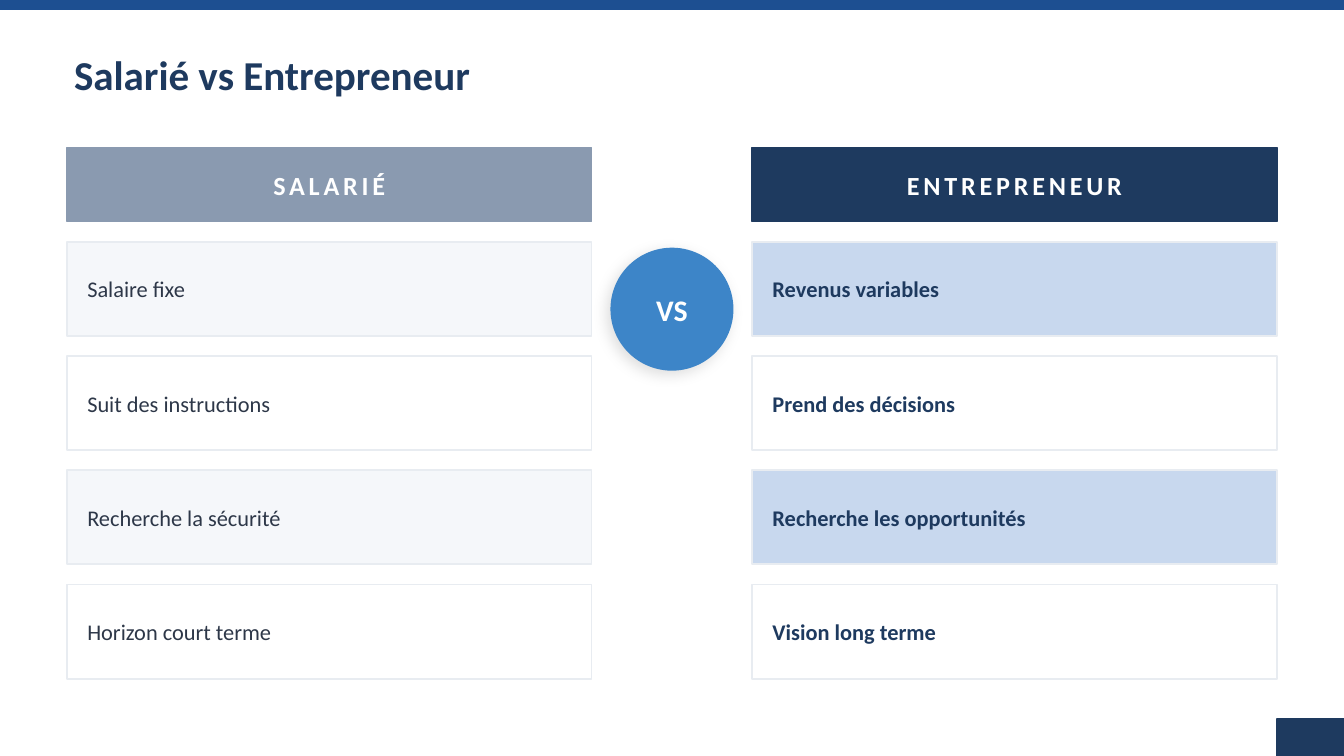
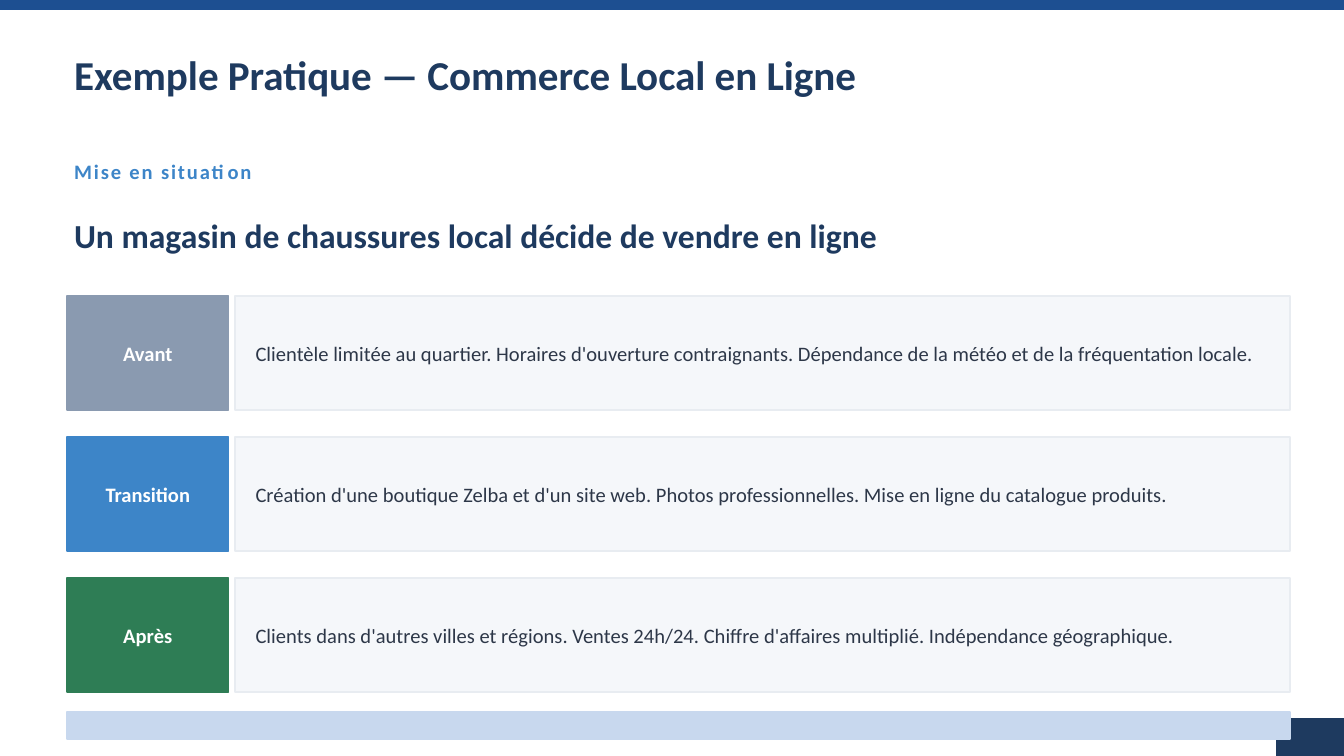
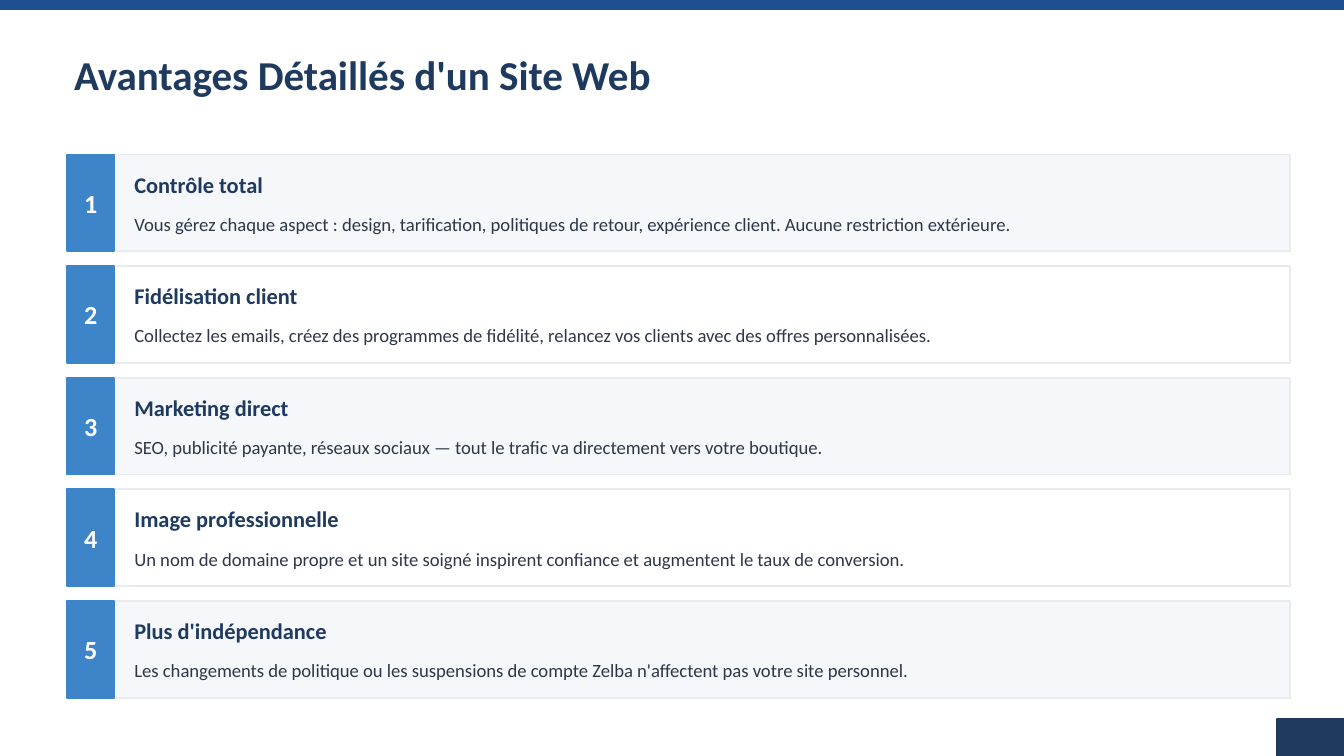
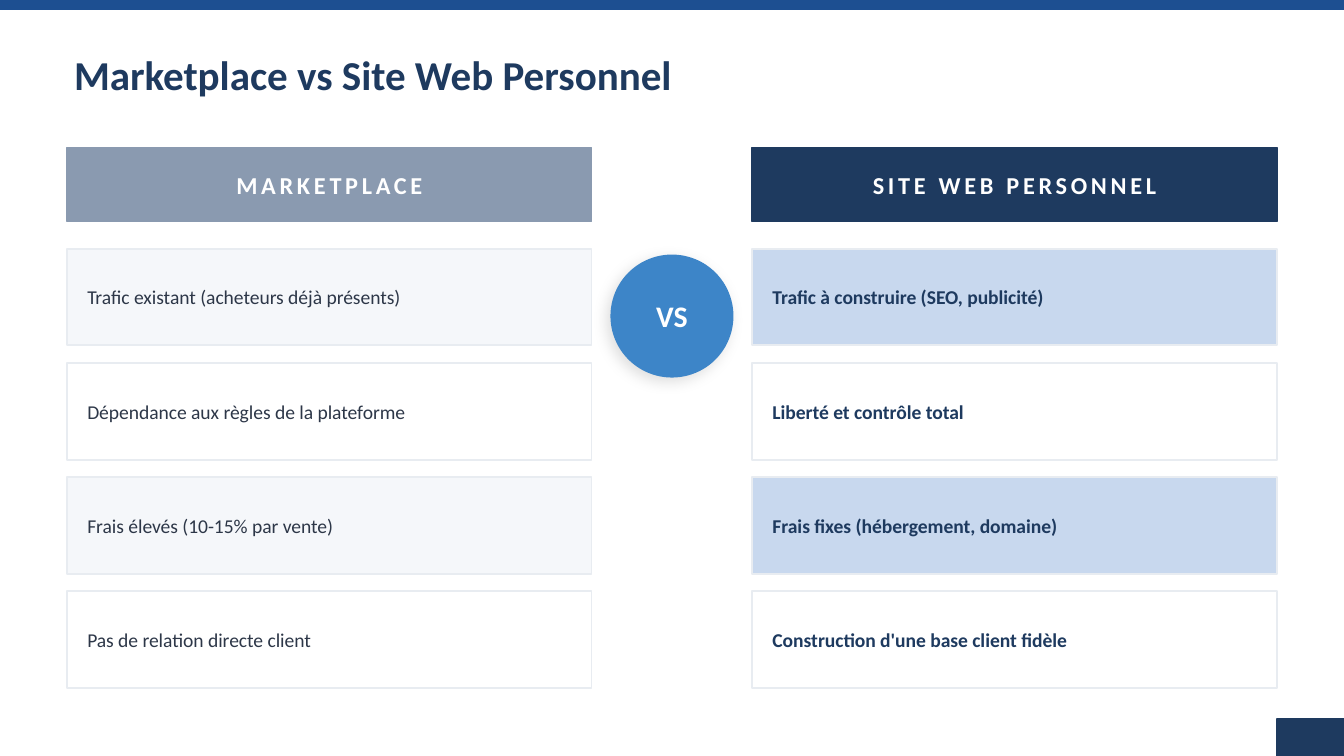
import pptx
import pptx.util
import pptx.dml.color
import pptx.enum.shapes
import pptx.enum.text
import pptx.oxml
import pptx.oxml.ns

Cm, Pt = pptx.util.Cm, pptx.util.Pt
SHAPE = pptx.enum.shapes.MSO_SHAPE
ALIGN = pptx.enum.text.PP_ALIGN

# ---- Content ----
EMPLOYEE_VS_FOUNDER = {
    "title": "Salarié vs Entrepreneur",
    "heads": ("SALARIÉ", "ENTREPRENEUR"),
    "pairs": [
        ("Salaire fixe", "Revenus variables"),
        ("Suit des instructions", "Prend des décisions"),
        ("Recherche la sécurité", "Recherche les opportunités"),
        ("Horizon court terme", "Vision long terme"),
    ],
    "head_size": 14, "row_size": 12, "top": 4.57, "row_height": 1.78,
}
MARKETPLACE_VS_SITE = {
    "title": "Marketplace vs Site Web Personnel",
    "heads": ("MARKETPLACE", "SITE WEB PERSONNEL"),
    "pairs": [
        ("Trafic existant (acheteurs déjà présents)", "Trafic à construire (SEO, publicité)"),
        ("Dépendance aux règles de la plateforme", "Liberté et contrôle total"),
        ("Frais élevés (10-15% par vente)", "Frais fixes (hébergement, domaine)"),
        ("Pas de relation directe client", "Construction d'une base client fidèle"),
    ],
    "head_size": 13, "row_size": 10.5, "top": 4.7, "row_height": 1.83,
}
EXAMPLE_TITLE = "Exemple Pratique — Commerce Local en Ligne"
EXAMPLE_LABEL = "Mise en situation"
EXAMPLE_SCENARIO = "Un magasin de chaussures local décide de vendre en ligne"
EXAMPLE_STAGES = [
    ("Avant", "slate", "Clientèle limitée au quartier. Horaires d'ouverture contraignants. "
     "Dépendance de la météo et de la fréquentation locale."),
    ("Transition", "blue", "Création d'une boutique Zelba et d'un site web. "
     "Photos professionnelles. Mise en ligne du catalogue produits."),
    ("Après", "green", "Clients dans d'autres villes et régions. Ventes 24h/24. "
     "Chiffre d'affaires multiplié. Indépendance géographique."),
]
BENEFITS_TITLE = "Avantages Détaillés d'un Site Web"
BENEFITS = [
    ("Contrôle total", "Vous gérez chaque aspect : design, tarification, politiques de retour, "
     "expérience client. Aucune restriction extérieure."),
    ("Fidélisation client", "Collectez les emails, créez des programmes de fidélité, "
     "relancez vos clients avec des offres personnalisées."),
    ("Marketing direct", "SEO, publicité payante, réseaux sociaux — tout le trafic va "
     "directement vers votre boutique."),
    ("Image professionnelle", "Un nom de domaine propre et un site soigné inspirent confiance "
     "et augmentent le taux de conversion."),
    ("Plus d'indépendance", "Les changements de politique ou les suspensions de compte Zelba "
     "n'affectent pas votre site personnel."),
]

# ---- Shared style (lengths in cm) ----
COLORS = {
    "band": "1D4F91", "navy": "1E3A5F", "blue": "3D85C8", "slate": "8A9AB0",
    "green": "2E7D55", "pale_blue": "C8D8EE", "pale_grey": "F5F7FA",
    "border": "E8ECF1", "text": "2D3748", "white": "FFFFFF",
}
FONT = "Calibri"
WIDTH, HEIGHT = 25.4, 14.29
MARGIN = 1.27
TEXT_LEFT = 1.4
FULL_WIDTH = 23.11
PADDING = 0.38


def rgb(name):
    return pptx.dml.color.RGBColor.from_string(COLORS[name])


def style(paragraph, size, color, bold=False, align=ALIGN.LEFT, spacing=0):
    paragraph.alignment = align
    font = paragraph.font
    font.name, font.size, font.bold = FONT, Pt(size), bold
    font.color.rgb = rgb(color)
    if spacing:
        font._element.set("spc", str(spacing * 100))


def set_frame(frame, left=0, right=0):
    frame.word_wrap = True
    frame.auto_size = pptx.enum.text.MSO_AUTO_SIZE.NONE
    frame.vertical_anchor = pptx.enum.text.MSO_ANCHOR.MIDDLE
    frame.margin_left, frame.margin_right = Cm(left), Cm(right)
    frame.margin_top = frame.margin_bottom = 0


def write(frame, text, size, color, **options):
    frame.text = text
    style(frame.paragraphs[0], size, color, **options)


def add_block(slide, box, fill, border=None, kind=SHAPE.RECTANGLE, padding=0):
    block = slide.shapes.add_shape(kind, *map(Cm, box))
    block.shadow.inherit = False
    block.fill.solid()
    block.fill.fore_color.rgb = rgb(fill)
    block.line.color.rgb = rgb(border or fill)
    block.line.width = Pt(1)
    set_frame(block.text_frame, padding, PADDING if padding else 0)
    return block


def add_label(slide, box, fill, text, size, **options):
    label = add_block(slide, box, fill, kind=options.pop("kind", SHAPE.RECTANGLE))
    write(label.text_frame, text, size, "white", bold=True, align=ALIGN.CENTER, **options)
    return label


def add_line_of_text(slide, box, text, size, color, **options):
    frame = slide.shapes.add_textbox(*map(Cm, box)).text_frame
    set_frame(frame)
    write(frame, text, size, color, **options)


def add_slide(deck, title):
    slide = deck.slides.add_slide(deck.slide_layouts[5])
    heading = slide.shapes.title
    heading.left, heading.top, heading.width, heading.height = map(
        Cm, (TEXT_LEFT, 0.51, 22.61, 1.78))
    set_frame(heading.text_frame)
    write(heading.text_frame, title, 22, "navy", bold=True)
    add_block(slide, (0, 0, WIDTH, 0.18), "band")
    add_block(slide, (24.13, 13.59, 1.27, 0.7), "navy")
    return slide


def soften(badge):
    """Give the badge its soft drop shadow."""
    effects = badge._element.spPr.find(pptx.oxml.ns.qn("a:effectLst"))
    effects.append(pptx.oxml.parse_xml(
        f'<a:outerShdw {pptx.oxml.ns.nsdecls("a")} blurRad="{Pt(8)}" dist="{Pt(3)}" '
        'dir="8100000" algn="bl" rotWithShape="0"><a:srgbClr val="000000">'
        '<a:alpha val="12000"/></a:srgbClr></a:outerShdw>'))


# ---- Slide kinds ----
def add_comparison(deck, content):
    slide = add_slide(deck, content["title"])
    column_width, pitch, badge_size = 9.91, 2.16, 2.29
    columns = [
        # left, head fill, shaded row fill, row text, bold
        (MARGIN, "slate", "pale_grey", "text", False),
        (WIDTH - MARGIN - column_width, "navy", "pale_blue", "navy", True),
    ]
    badge_box = ((WIDTH - badge_size) / 2, content["top"] + 0.13, badge_size, badge_size)
    soften(add_label(slide, badge_box, "blue", "VS", 16, kind=SHAPE.OVAL))

    for side, (left, head_fill, shade, color, bold) in enumerate(columns):
        add_label(slide, (left, 2.79, column_width, 1.4), head_fill,
                  content["heads"][side], content["head_size"], spacing=2)
        for row, pair in enumerate(content["pairs"]):
            box = (left, content["top"] + row * pitch, column_width, content["row_height"])
            fill = "white" if row % 2 else shade
            card = add_block(slide, box, fill, "border", padding=PADDING)
            write(card.text_frame, pair[side], content["row_size"], color, bold=bold)


def add_example(deck):
    slide = add_slide(deck, EXAMPLE_TITLE)
    add_line_of_text(slide, (TEXT_LEFT, 2.79, 10.16, 0.89), EXAMPLE_LABEL, 11, "blue",
                     bold=True, spacing=1)
    add_line_of_text(slide, (TEXT_LEFT, 3.68, 20.32, 1.52), EXAMPLE_SCENARIO, 18, "navy",
                     bold=True)

    top, pitch, height, stage_width, gap = 5.59, 2.67, 2.16, 3.05, 0.13
    story_left = MARGIN + stage_width + gap
    for row, (stage, fill, story) in enumerate(EXAMPLE_STAGES):
        y = top + row * pitch
        add_label(slide, (MARGIN, y, stage_width, height), fill, stage, 11)
        card = add_block(slide, (story_left, y, FULL_WIDTH - stage_width - gap, height),
                         "pale_grey", "border", padding=PADDING)
        write(card.text_frame, story, 11, "text")
    add_block(slide, (MARGIN, 13.46, FULL_WIDTH, 0.51), "pale_blue")


def add_benefits(deck):
    slide = add_slide(deck, BENEFITS_TITLE)
    top, pitch, height, number_width = 2.92, 2.11, 1.83, 0.89
    for row, (benefit, detail) in enumerate(BENEFITS):
        y = top + row * pitch
        card = add_block(slide, (MARGIN, y, FULL_WIDTH, height),
                         "white" if row % 2 else "pale_grey", "border",
                         padding=number_width + PADDING)
        write(card.text_frame, benefit, 12, "navy", bold=True)
        explanation = card.text_frame.add_paragraph()
        explanation.text = detail
        explanation.space_before = Pt(8)
        style(explanation, 10, "text")
        add_label(slide, (MARGIN, y, number_width, height), "blue", str(row + 1), 14)


def main():
    deck = pptx.Presentation()
    deck.slide_width, deck.slide_height = Cm(WIDTH), Cm(HEIGHT)
    add_comparison(deck, EMPLOYEE_VS_FOUNDER)
    add_example(deck)
    add_benefits(deck)
    add_comparison(deck, MARKETPLACE_VS_SITE)
    deck.save("out.pptx")


if __name__ == "__main__":
    main()
